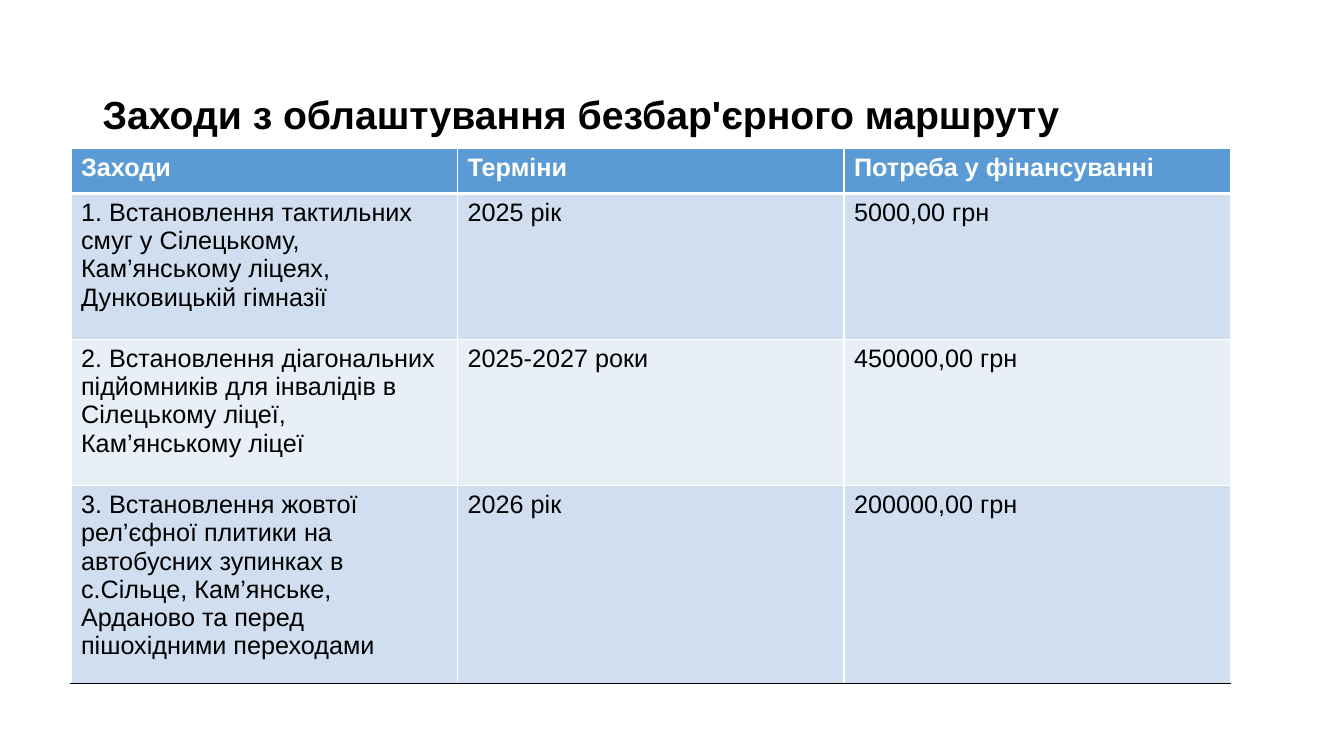
import pptx
import pptx.dml.color
import pptx.enum.text
import pptx.oxml.ns
import pptx.util
import lxml.etree

Cm = pptx.util.Cm
Pt = pptx.util.Pt

FONT = "Arial"
BLACK, WHITE = "000000", "FFFFFF"
HEADER_FILL = "5B9BD5"
BAND_FILLS = ["D0DEEF", "E9EFF7"]

TITLE = "Заходи з облаштування безбар'єрного маршруту"
MEASURES = [
    ("Заходи", "Терміни", "Потреба у фінансуванні"),
    ("1. Встановлення тактильних смуг у Сілецькому, Кам’янському ліцеях, "
     "Дунковицькій гімназії", "2025 рік", "5000,00 грн"),
    ("2. Встановлення діагональних підйомників для інвалідів в Сілецькому ліцеї, "
     "Кам’янському ліцеї", "2025-2027 роки", "450000,00 грн"),
    ("3. Встановлення жовтої рел’єфної плитики на автобусних зупинках в с.Сільце, "
     "Кам’янське, Арданово та перед пішохідними переходами", "2026 рік", "200000,00 грн"),
]
ROW_HEIGHTS = [Cm(1.14), Cm(3.68), Cm(3.68), Cm(4.98)]


def color(hex_string):
    return pptx.dml.color.RGBColor.from_string(hex_string)


def format_text(frame, size, hex_string, bold):
    for para in frame.paragraphs:
        for run in para.runs:
            run.font.name = FONT
            run.font.size = Pt(size)
            run.font.bold = bold
            run.font.color.rgb = color(hex_string)


def add_border(cell, side, hex_string, width):
    """Draw one cell side (L, R, T or B); call before the cell is filled."""
    properties = cell._tc.get_or_add_tcPr()
    line = lxml.etree.SubElement(
        properties, pptx.oxml.ns.qn(f"a:ln{side}"), w=str(Pt(width)))
    fill = lxml.etree.SubElement(line, pptx.oxml.ns.qn("a:solidFill"))
    lxml.etree.SubElement(fill, pptx.oxml.ns.qn("a:srgbClr"), val=hex_string)


def place_title(slide, left, top, width, height):
    title = slide.shapes.title
    title.left, title.top, title.width, title.height = left, top, width, height
    frame = title.text_frame
    frame.text = TITLE
    frame.word_wrap = True
    frame.vertical_anchor = pptx.enum.text.MSO_ANCHOR.MIDDLE
    frame.paragraphs[0].alignment = pptx.enum.text.PP_ALIGN.LEFT
    frame.paragraphs[0].line_spacing = 0.9
    format_text(frame, 28, BLACK, True)


def add_measures_table(slide, left, top, width):
    last = len(MEASURES) - 1
    table = slide.shapes.add_table(
        len(MEASURES), len(MEASURES[0]), left, top, width, sum(ROW_HEIGHTS)).table
    for index, (texts, height) in enumerate(zip(MEASURES, ROW_HEIGHTS)):
        is_header = index == 0
        table.rows[index].height = height
        for cell, text in zip(table.rows[index].cells, texts):
            cell.text = text
            format_text(cell.text_frame, 18, WHITE if is_header else BLACK, is_header)
            add_border(cell, "L", WHITE, 1)
            add_border(cell, "R", WHITE, 1)
            add_border(cell, "T", WHITE, 3 if index == 1 else 1)
            add_border(cell, "B", BLACK if index == last else WHITE, 3 if is_header else 1)
            cell.fill.solid()
            cell.fill.fore_color.rgb = color(
                HEADER_FILL if is_header else BAND_FILLS[(index - 1) % 2])


def main():
    deck = pptx.Presentation()
    deck.slide_width, deck.slide_height = Cm(33.87), Cm(19.05)
    slide = deck.slides.add_slide(deck.slide_layouts.get_by_name("Title Only"))
    place_title(slide, Cm(2.33), Cm(1.1), Cm(29.21), Cm(3.68))
    add_measures_table(slide, Cm(1.79), Cm(3.74), Cm(29.22))
    deck.save("out.pptx")


if __name__ == "__main__":
    main()
